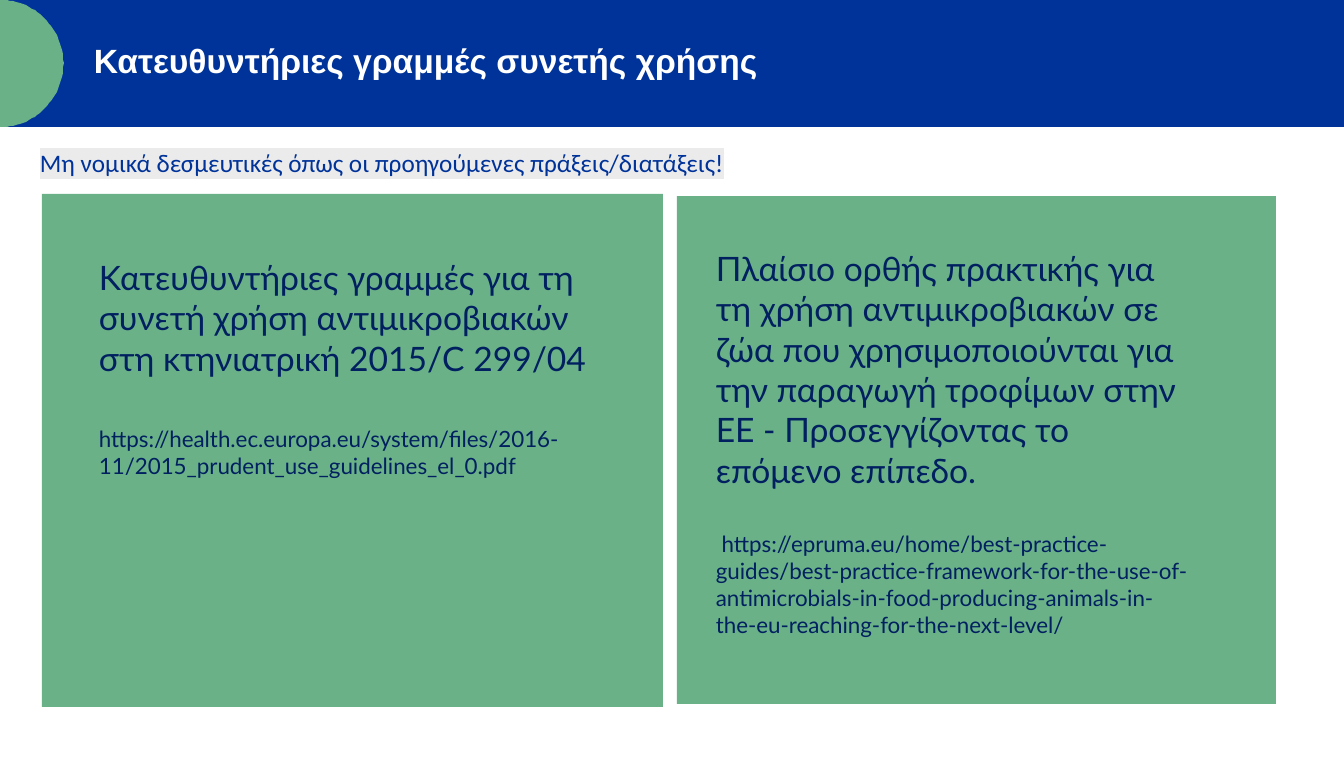
from math import cos, pi, sin

from lxml import etree
from pptx import Presentation
from pptx.dml.color import RGBColor
from pptx.enum.shapes import MSO_SHAPE
from pptx.enum.text import MSO_ANCHOR
from pptx.oxml.ns import qn
from pptx.util import Emu, Pt

RECT = MSO_SHAPE.RECTANGLE
TOP, MIDDLE = MSO_ANCHOR.TOP, MSO_ANCHOR.MIDDLE
BLUE = RGBColor(0x00, 0x33, 0x99)
GREEN = RGBColor(0x6B, 0xB1, 0x88)
NAVY = RGBColor(0x00, 0x20, 0x60)
WHITE = RGBColor(0xFF, 0xFF, 0xFF)
GREY = RGBColor(0xEC, 0xEB, 0xEB)
PX = 914400 / 100.8


def paint(s, color):
    s.shadow.inherit = False
    s.fill.solid()
    s.fill.fore_color.rgb = color
    s.line.fill.background()


def add_text(box, *paragraphs, font, color, bold=False, gap=0, anchor=TOP, highlight=None):
    """Add a text box; each paragraph is a (text, size) pair."""
    tf = slide.shapes.add_textbox(*[Emu(round(v * PX)) for v in box]).text_frame
    tf.word_wrap = True
    tf.vertical_anchor = anchor
    for i, (text, size) in enumerate(paragraphs):
        p = tf.add_paragraph() if i else tf.paragraphs[0]
        if i:
            p.space_before = Pt(gap)
        r = p.add_run()
        r.text = text
        r.font.size = Pt(size)
        r.font.bold = bold
        r.font.color.rgb = color
        if highlight:
            mark = etree.SubElement(r.font._element, qn("a:highlight"))
            etree.SubElement(mark, qn("a:srgbClr"), val=str(highlight))
        r.font.name = font


prs = Presentation()
prs.slide_width, prs.slide_height = Emu(round(1344 * PX)), Emu(round(757 * PX))
slide = prs.slides.add_slide(prs.slide_layouts[6])

# Header band and the two green panels
for box, color in [
    ((0, 0, 1344, 127), BLUE),
    ((42, 194, 621, 513), GREEN),
    ((677, 196, 599, 508), GREEN),
]:
    paint(slide.shapes.add_shape(RECT, *[Emu(round(v * PX)) for v in box]), color)

# Half circle at the left edge of the header
radius, steps = 63.5, 60
angles = [pi * i / steps - pi / 2 for i in range(steps + 1)]
arc = [(radius * cos(a), radius + radius * sin(a)) for a in angles]
builder = slide.shapes.build_freeform(*arc[0], scale=PX)
builder.add_line_segments(arc[1:], close=True)
paint(builder.convert_to_shape(), GREEN)

# Title and subtitle
add_text((84, 34, 1066, 53), ("Κατευθυντήριες γραμμές συνετής χρήσης", 24),
         font="Arial", color=WHITE, bold=True, anchor=MIDDLE)
add_text((30, 142, 919, 40),
         ("Μη νομικά δεσμευτικές όπως οι προηγούμενες πράξεις/διατάξεις!", 18),
         font="Calibri", color=BLUE, highlight=GREY)

# Panel texts, each with its link
add_text((89, 252, 524, 343),
         ("Κατευθυντήριες γραμμές για τη συνετή χρήση "
          "αντιμικροβιακών στη κτηνιατρική 2015/C 299/04", 24),
         ("https://health.ec.europa.eu/system/files/2016-11/"
          "2015_prudent_use_guidelines_el_0.pdf", 16),
         font="Lato", color=NAVY, gap=34)
add_text((706, 243, 496, 404),
         ("Πλαίσιο ορθής πρακτικής για τη χρήση αντιμικροβιακών σε ζώα που "
          "χρησιμοποιούνται για την παραγωγή τροφίμων στην "
          "ΕΕ - Προσεγγίζοντας το επόμενο επίπεδο.", 24),
         (" https://epruma.eu/home/best-practice-guides/best-practice-framework-"
          "for-the-use-of-antimicrobials-in-food-producing-animals-in-the-eu-"
          "reaching-for-the-next-level/", 16),
         font="Lato", color=NAVY, gap=29)

prs.save("out.pptx")
